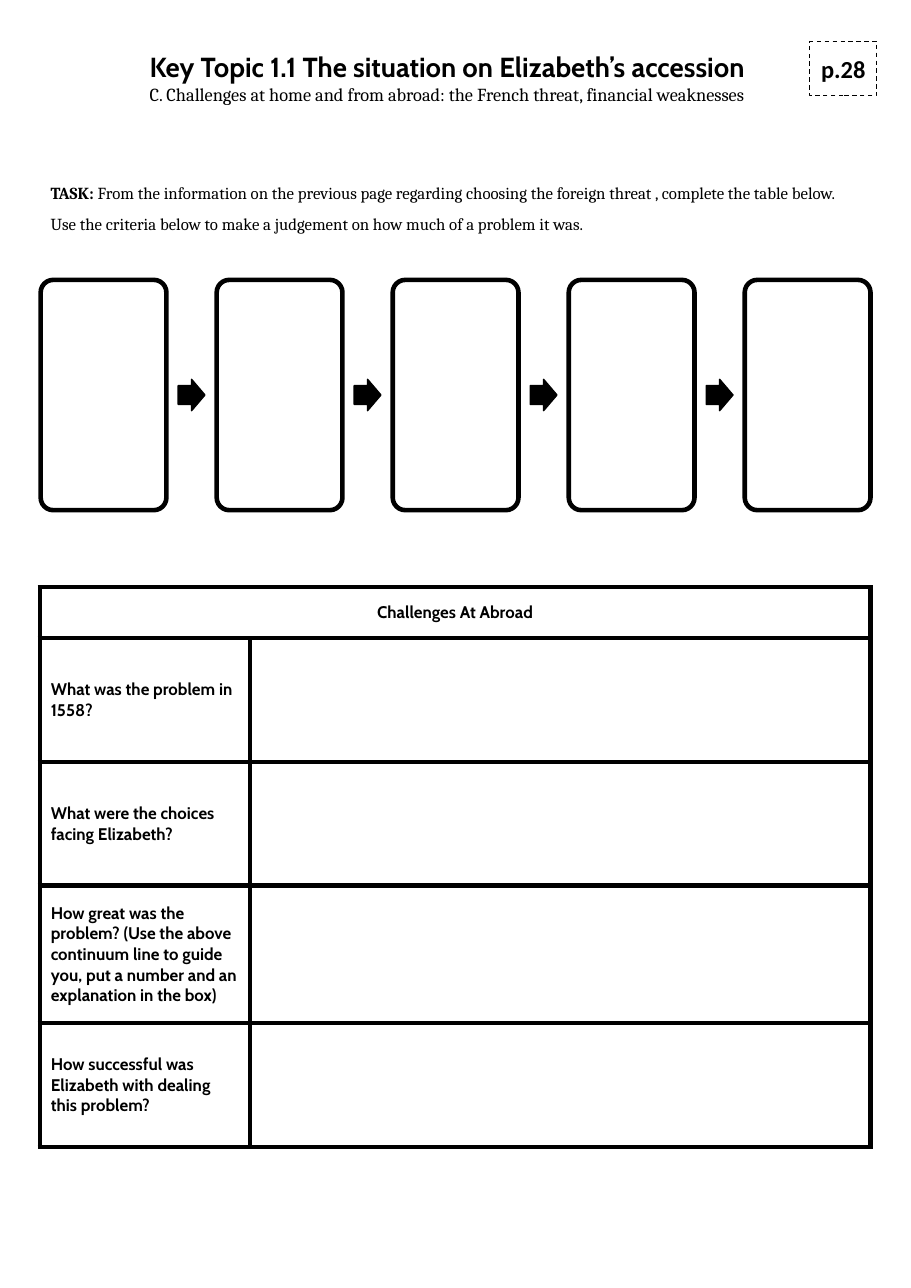
from lxml import etree
from pptx import Presentation
from pptx import util as u
from pptx.dml.color import RGBColor
from pptx.enum import dml, shapes, text
from pptx.oxml.ns import qn

COLORS = {"ink": "000000", "paper": "FFFFFF"}
QUESTIONS = [
    "What was the problem in 1558?",
    "What were the choices facing Elizabeth?",
    "How great was the problem? (Use the above continuum line to guide you, "
    "put a number and an explanation in the box)",
    "How successful was Elizabeth with dealing this problem?",
]


def color(name):
    """Return the named colour."""
    return RGBColor.from_string(COLORS[name])


def style(r, font, size, bold=False):
    """Set the font of one run."""
    r.font.name, r.font.size, r.font.bold = font, u.Pt(size), bold
    r.font.color.rgb = color("ink")


def add_text(s, box):
    """Add a wrapping text box and return its text frame."""
    tf = s.shapes.add_textbox(*map(u.Pt, box)).text_frame
    tf.word_wrap = True
    return tf


def set_margins(tf, size):
    """Set equal margins and middle anchoring."""
    tf.margin_left = tf.margin_right = u.Pt(size)
    tf.margin_top = tf.margin_bottom = u.Pt(size)
    tf.vertical_anchor = text.MSO_ANCHOR.MIDDLE


def add_block(s, kind, box, fill, width):
    """Add an outlined preset shape."""
    sp = s.shapes.add_shape(kind, *map(u.Pt, box))
    sp.shadow.inherit = False
    sp.fill.solid()
    sp.fill.fore_color.rgb = color(fill)
    sp.line.color.rgb = color("ink")
    sp.line.width = u.Pt(width)
    return sp


def add_heading(s, box):
    """Place the topic title and its subtitle."""
    tf = add_text(s, box)
    set_margins(tf, 7.2)
    tf.text = ("Key Topic 1.1 The situation on Elizabeth’s accession\n"
               "C. Challenges at home and from abroad: the French threat, financial weaknesses")
    for p, look in zip(tf.paragraphs, [("Cabin", 18, True), ("Cambria", 12)]):
        p.alignment = text.PP_ALIGN.CENTER
        style(p.runs[0], *look)


def add_page_tag(s, box):
    """Place the dashed page number tag."""
    sp = add_block(s, shapes.MSO_SHAPE.RECTANGLE, box, "paper", 0.75)
    sp.line.dash_style = dml.MSO_LINE.DASH
    tf = sp.text_frame
    set_margins(tf, 7.2)
    tf.word_wrap = False
    p = tf.paragraphs[0]
    p.text = "p.28"
    p.alignment = text.PP_ALIGN.CENTER
    style(p.runs[0], "Calibri", 16, True)


def add_task(s, box):
    """Place the task instructions."""
    p = add_text(s, box).paragraphs[0]
    p.line_spacing = 1.5
    for words, bold in [
        ("TASK: ", True),
        ("From the information on the previous page regarding choosing the foreign threat , "
         "complete the table below. Use the criteria below to make a judgement on how much "
         "of a problem it was.", False),
    ]:
        r = p.add_run()
        r.text = words
        style(r, "Cambria", 11, bold)


def add_continuum(s, box, count=5):
    """Place a row of empty cards joined by arrows."""
    left, top, width, height = box
    card_w, arrow_w, arrow_h = 82.2, 17.4, 20.4
    step = (width - card_w) / (count - 1)
    for i in range(count):
        x = left + i * step
        card = add_block(s, shapes.MSO_SHAPE.ROUNDED_RECTANGLE,
                         (x, top, card_w, height), "paper", 3)
        card.adjustments[0] = 0.1
        if i < count - 1:
            arrow_x = x + (card_w + step - arrow_w) / 2
            arrow_y = top + (height - arrow_h) / 2
            arrow = add_block(s, shapes.MSO_SHAPE.RIGHT_ARROW,
                              (arrow_x, arrow_y, arrow_w, arrow_h), "ink", 1)
            arrow.adjustments[0] = 0.6
            arrow.adjustments[1] = 0.5


def format_cell(cell):
    """Give a cell thick borders and a plain fill."""
    tc_pr = cell._tc.get_or_add_tcPr()
    for side in ("a:lnL", "a:lnR", "a:lnT", "a:lnB"):
        ln = etree.SubElement(tc_pr, qn(side), w=str(u.Pt(3)))
        fill = etree.SubElement(ln, qn("a:solidFill"))
        etree.SubElement(fill, qn("a:srgbClr"), val=COLORS["ink"])
    cell.fill.solid()
    cell.fill.fore_color.rgb = color("paper")
    cell.vertical_anchor = text.MSO_ANCHOR.MIDDLE


def add_questions(s, box):
    """Place the table of questions with blank answer cells."""
    heights = [33.3, 80.8, 80.8, 90, 80.8]
    table = s.shapes.add_table(len(heights), 2, *map(u.Pt, box)).table
    label_w = 137.5
    table.columns[0].width = u.Pt(label_w)
    table.columns[1].width = u.Pt(box[2] - label_w)
    for row, height in zip(table.rows, heights):
        row.height = u.Pt(height)
    for cell in table.iter_cells():
        format_cell(cell)
    table.cell(0, 0).merge(table.cell(0, 1))
    for i, words in enumerate(["Challenges At Abroad"] + QUESTIONS):
        p = table.cell(i, 0).text_frame.paragraphs[0]
        p.text = words
        p.alignment = text.PP_ALIGN.LEFT if i else text.PP_ALIGN.CENTER
        style(p.runs[0], "Cabin", 11, True)


def main():
    """Build the worksheet."""
    prs = Presentation()
    prs.slide_width, prs.slide_height = u.Pt(595.44), u.Pt(841.68)
    s = prs.slides.add_slide(prs.slide_layouts[6])
    add_heading(s, (55.4, 26.6, 473.8, 48.2))
    add_page_tag(s, (529.2, 27.2, 44, 35.2))
    add_questions(s, (26, 383.8, 543, 365.7))
    add_continuum(s, (26.6, 182.9, 542.4, 150.5))
    add_task(s, (26, 109.4, 543, 44.6))
    prs.save("out.pptx")


if __name__ == "__main__":
    main()
